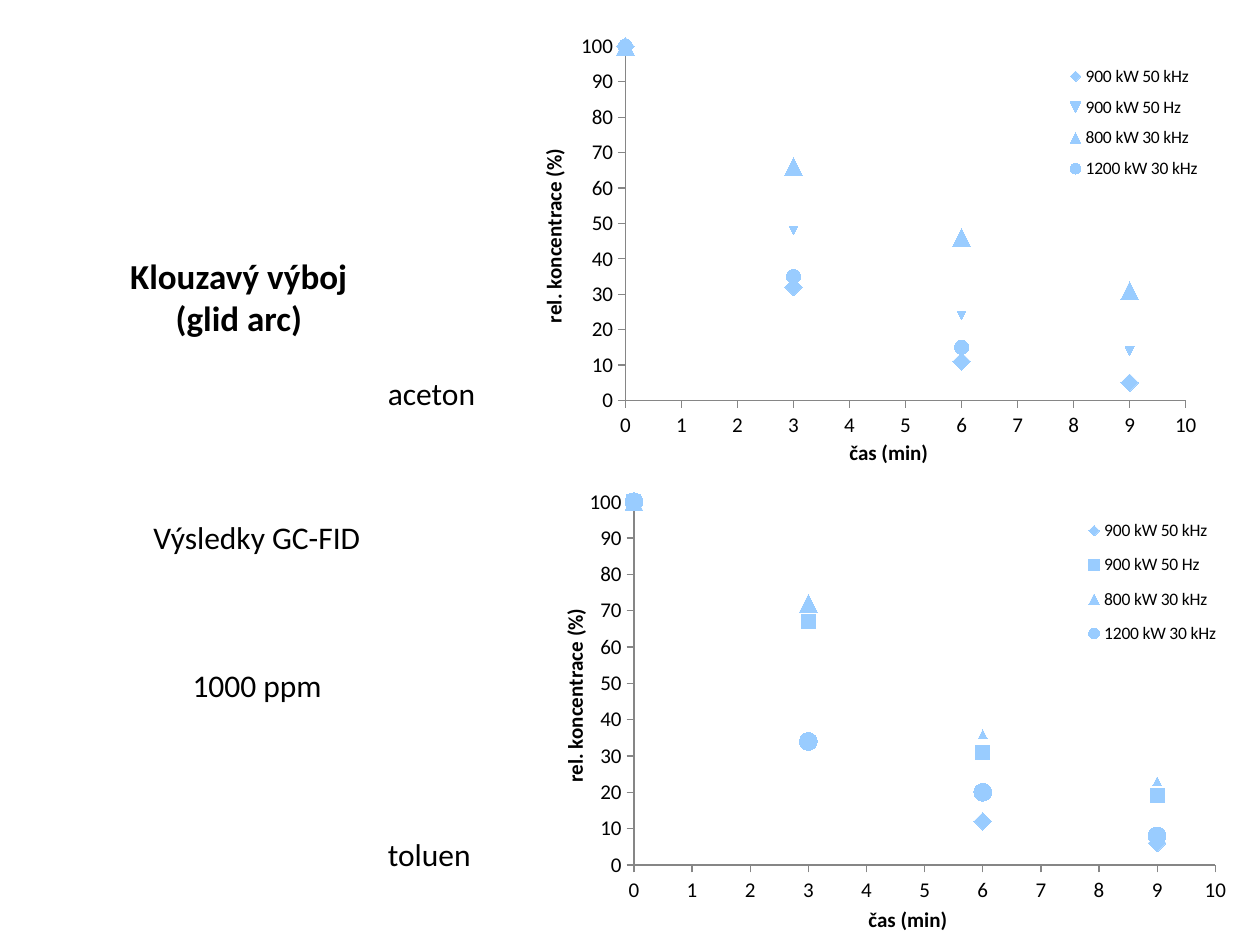
import pptx
import pptx.chart.data
import pptx.dml.color
import pptx.enum.chart
import pptx.enum.text
import pptx.oxml
import pptx.oxml.ns
import pptx.util
from pptx.util import Inches, Pt

FONT, BLACK, GREY, BLUE = "Calibri", "000000", "868686", "99CCFF"
TIMES = [0, 3, 6, 9]
NAMES = ["900 kW 50 kHz", "900 kW 50 Hz", "800 kW 30 kHz", "1200 kW 30 kHz"]

# lines, box, format
LABELS = [
    (["Klouzavý výboj", "(glid arc)"], (0.89, 1.97, 2.01, 0.77), {"size": Pt(20), "bold": True}),
    (["Výsledky GC-FID"], (1.12, 4.06, 1.86, 0.4), {"size": Pt(18)}),
    (["1000 ppm"], (1.43, 5.24, 1.24, 0.4), {"size": Pt(18)}),
    (["aceton"], (2.98, 2.92, 0.97, 0.4), {"size": Pt(18)}),
    (["toluen"], (2.98, 6.58, 0.97, 0.4), {"size": Pt(18)}),
]

# Each series: values, marker (None is automatic), marker size,
# and the points that get a marker of their own
CHARTS = [
    {
        "box": (4.25, 0.19, 5.49, 3.56),
        "plot": (0.13, 0.05, 0.81, 0.79),
        "legend": (0.76, 0.07, 0.21, 0.3),
        "rows": [
            ([100, 32, 11, 5], "DIAMOND", 10, []),
            ([100, 48, 24, 14], None, None, []),
            ([100, 66, 46, 31], "TRIANGLE", 10, []),
            ([100, 35, 15], "CIRCLE", 8, []),
        ],
    },
    {
        "box": (4.42, 3.8, 5.56, 3.65),
        "plot": (0.11, 0.05, 0.83, 0.79),
        "legend": (0.74, 0.06, 0.22, 0.33),
        "rows": [
            ([100, 34, 12, 6], "DIAMOND", 10, []),
            ([100, 67, 31, 19], "SQUARE", 8, []),
            ([100, 72, 36, 23], None, None, [0, 1]),
            ([100, 34, 20, 8], "CIRCLE", 10, []),
        ],
    },
]


def color(code):
    return pptx.dml.color.RGBColor.from_string(code)


def style(font, form):
    for key, value in {"name": FONT, **form}.items():
        setattr(font, key, value)
    font.color.rgb = color(BLACK)


def label(slide, lines, box, form):
    frame = slide.shapes.add_textbox(*map(Inches, box)).text_frame
    frame.word_wrap = False
    for i, line in enumerate(lines):
        para = frame.paragraphs[0] if i == 0 else frame.add_paragraph()
        if len(lines) > 1:
            para.alignment = pptx.enum.text.PP_ALIGN.CENTER
        run = para.add_run()
        run.text = line
        style(run.font, form)


def place(part, spot, index, inner=False):
    """Give a chart part a manual layout, in fractions of the chart."""
    old = part.find(pptx.oxml.ns.qn("c:layout"))
    if old is not None:
        part.remove(old)
    target = '<c:layoutTarget val="inner"/>' if inner else ""
    modes = "".join(f'<c:{k}Mode val="edge"/>' for k in "xy")
    sizes = "".join(f'<c:{k} val="{v}"/>' for k, v in zip("xywh", spot))
    part.insert(index, pptx.oxml.parse_xml(
        f'<c:layout {pptx.oxml.ns.nsdecls("c")}><c:manualLayout>'
        f"{target}{modes}{sizes}</c:manualLayout></c:layout>"))


def mark(owner, kind, size):
    marker = owner.marker
    if kind:
        marker.style = getattr(pptx.enum.chart.XL_MARKER_STYLE, kind)
        marker.size = size
    marker.format.fill.solid()
    marker.format.fill.fore_color.rgb = color(BLUE)
    marker.format.line.fill.background()


def scale(axis, title, top):
    form = {
        "minimum_scale": 0, "maximum_scale": top, "major_unit": top / 10,
        "has_major_gridlines": False,
        "major_tick_mark": pptx.enum.chart.XL_TICK_MARK.OUTSIDE,
        "minor_tick_mark": pptx.enum.chart.XL_TICK_MARK.NONE,
    }
    for key, value in form.items():
        setattr(axis, key, value)
    axis.format.line.color.rgb = color(GREY)
    axis.format.line.width = Pt(0.75)
    style(axis.tick_labels.font, {"size": Pt(12)})
    axis.tick_labels.number_format = "General"
    axis.tick_labels.number_format_is_linked = False
    run = axis.axis_title.text_frame.paragraphs[0].add_run()
    run.text = title
    style(run.font, {"size": Pt(12), "bold": True})


def plot(slide, item):
    data = pptx.chart.data.XyChartData()
    for name, row in zip(NAMES, item["rows"]):
        series = data.add_series(name)
        for x, y in zip(TIMES, row[0]):
            series.add_data_point(x, y)
    chart = slide.shapes.add_chart(
        pptx.enum.chart.XL_CHART_TYPE.XY_SCATTER,
        *map(Inches, item["box"]), data).chart
    chart.has_title = False
    style(chart.font, {"size": Pt(10)})
    scale(chart.category_axis, "čas (min)", 10)
    scale(chart.value_axis, "rel. koncentrace (%)", 100)
    chart.plots[0].vary_by_categories = False
    for series, (_, kind, size, own) in zip(chart.plots[0].series, item["rows"]):
        series.smooth = False
        series.format.line.fill.background()
        mark(series, kind, size)
        for i in own:
            mark(series.points[i], "TRIANGLE", 10)
    chart.has_legend = True
    legend = chart.legend
    legend.position = pptx.enum.chart.XL_LEGEND_POSITION.RIGHT
    legend.include_in_layout = False
    style(legend.font, {"size": Pt(10)})
    area = chart.element.find(".//" + pptx.oxml.ns.qn("c:plotArea"))
    place(area, item["plot"], 0, inner=True)
    place(chart.element.find(".//" + pptx.oxml.ns.qn("c:legend")), item["legend"], 1)


def main():
    deck = pptx.Presentation()
    deck.slide_width, deck.slide_height = Inches(10), Inches(7.5)
    slide = deck.slides.add_slide(deck.slide_layouts[6])
    for item in CHARTS:
        plot(slide, item)
    for item in LABELS:
        label(slide, *item)
    deck.save("out.pptx")


if __name__ == "__main__":
    main()
